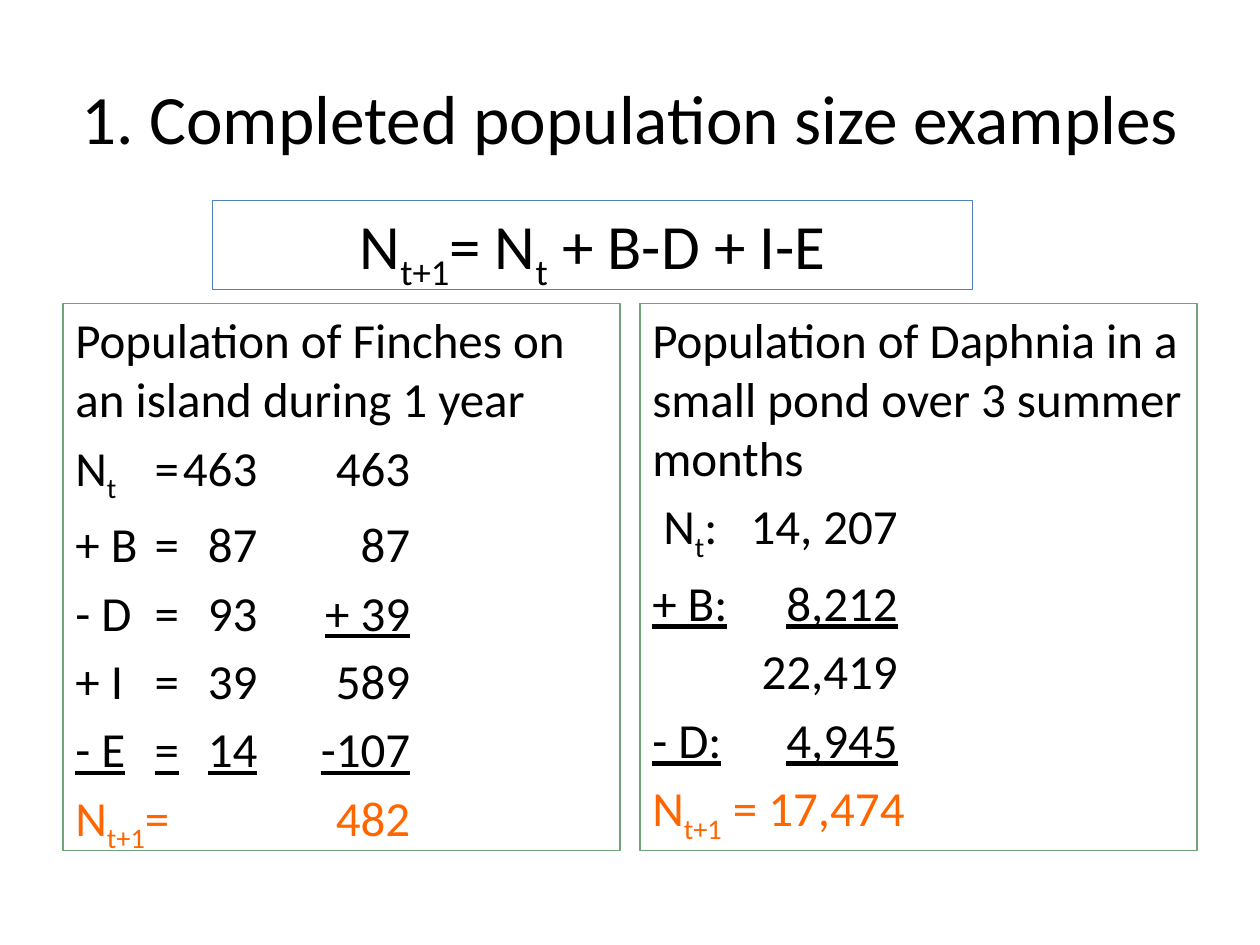
from lxml.etree import SubElement
from pptx import Presentation
from pptx.dml.color import RGBColor
from pptx.enum.text import MSO_ANCHOR, PP_ALIGN
from pptx.oxml.ns import qn
from pptx.util import Cm, Pt

BLACK = RGBColor(0x00, 0x00, 0x00)
ORANGE = RGBColor(0xFF, 0x66, 0x00)
GREEN = RGBColor(0x72, 0xA3, 0x76)
BLUE = RGBColor(0x4F, 0x81, 0xBD)

# Tab stops: position in cm and alignment
LEDGER = [(1.6, "l"), (3.67, "r"), (6.75, "r")]
LEDGER_TOTAL = [(6.75, "r")]
SUM = [(4.95, "r")]


def add_frame(left, top, width, height, colour):
    """Add an outlined text box and return its text frame."""
    box = slide.shapes.add_textbox(Cm(left), Cm(top), Cm(width), Cm(height))
    box.line.color.rgb = colour
    box.line.width = Pt(0.75)
    box.text_frame.word_wrap = True
    return box.text_frame


def write(paragraph, text, size, colour=BLACK, underlined="", stops=()):
    """Write text, with subscripts between tildes, then the underlined part."""
    if stops:
        tab_list = SubElement(paragraph._p.get_or_add_pPr(), qn("a:tabLst"))
        for position, alignment in stops:
            SubElement(tab_list, qn("a:tab"), pos=str(Cm(position)), algn=alignment)
    paragraph.font.name = "Calibri"
    paragraph.font.size = Pt(size)
    paragraph.font.color.rgb = colour
    for index, piece in enumerate(text.split("~")):
        if piece:
            run = paragraph.add_run()
            run.text = piece
            if index % 2:
                run._r.get_or_add_rPr().set("baseline", "-25000")
    if underlined:
        run = paragraph.add_run()
        run.text = underlined
        run.font.underline = True


presentation = Presentation()
presentation.slide_width = Cm(25.4)
presentation.slide_height = Cm(19.05)
slide = presentation.slides.add_slide(presentation.slide_layouts[5])

title = slide.shapes.title
title.left, title.top, title.width, title.height = Cm(1.27), Cm(0.76), Cm(22.86), Cm(3.18)
title.text_frame.vertical_anchor = MSO_ANCHOR.MIDDLE
write(title.text_frame.paragraphs[0], "1. Completed population size examples", 39.6)

# Each row: text, underlined text, colour, tab stops
finches = [
    ("Population of Finches on an island during 1 year", "", BLACK, ()),
    ("N~t~\t=\t463\t463", "", BLACK, LEDGER),
    ("+ B\t=\t87\t87", "", BLACK, LEDGER),
    ("- D\t=\t93\t", "+ 39", BLACK, LEDGER),
    ("+ I\t=\t39\t589", "", BLACK, LEDGER),
    ("", "- E\t=\t14\t-107", BLACK, LEDGER),
    ("N~t+1~=\t482", "", ORANGE, LEDGER_TOTAL),
]
daphnia = [
    ("Population of Daphnia in a small pond over 3 summer months", "", BLACK, ()),
    (" N~t~:\t14, 207", "", BLACK, SUM),
    ("", "+ B:\t8,212", BLACK, SUM),
    ("\t22,419", "", BLACK, SUM),
    ("", "- D:\t4,945", BLACK, SUM),
    ("N~t+1~ = 17,474", "", ORANGE, ()),
]
for left, rows in ((1.27, finches), (12.9, daphnia)):
    frame = add_frame(left, 6.12, 11.23, 11.02, GREEN)
    for index, (text, underlined, colour, stops) in enumerate(rows):
        paragraph = frame.add_paragraph() if index else frame.paragraphs[0]
        paragraph.space_before = Pt(5.5)
        write(paragraph, text, 28, colour, underlined, stops)

equation = add_frame(4.29, 4.04, 15.32, 1.8, BLUE).paragraphs[0]
equation.alignment = PP_ALIGN.CENTER
write(equation, "N~t+1~= N~t~ + B-D + I-E", 36)

presentation.save("out.pptx")
